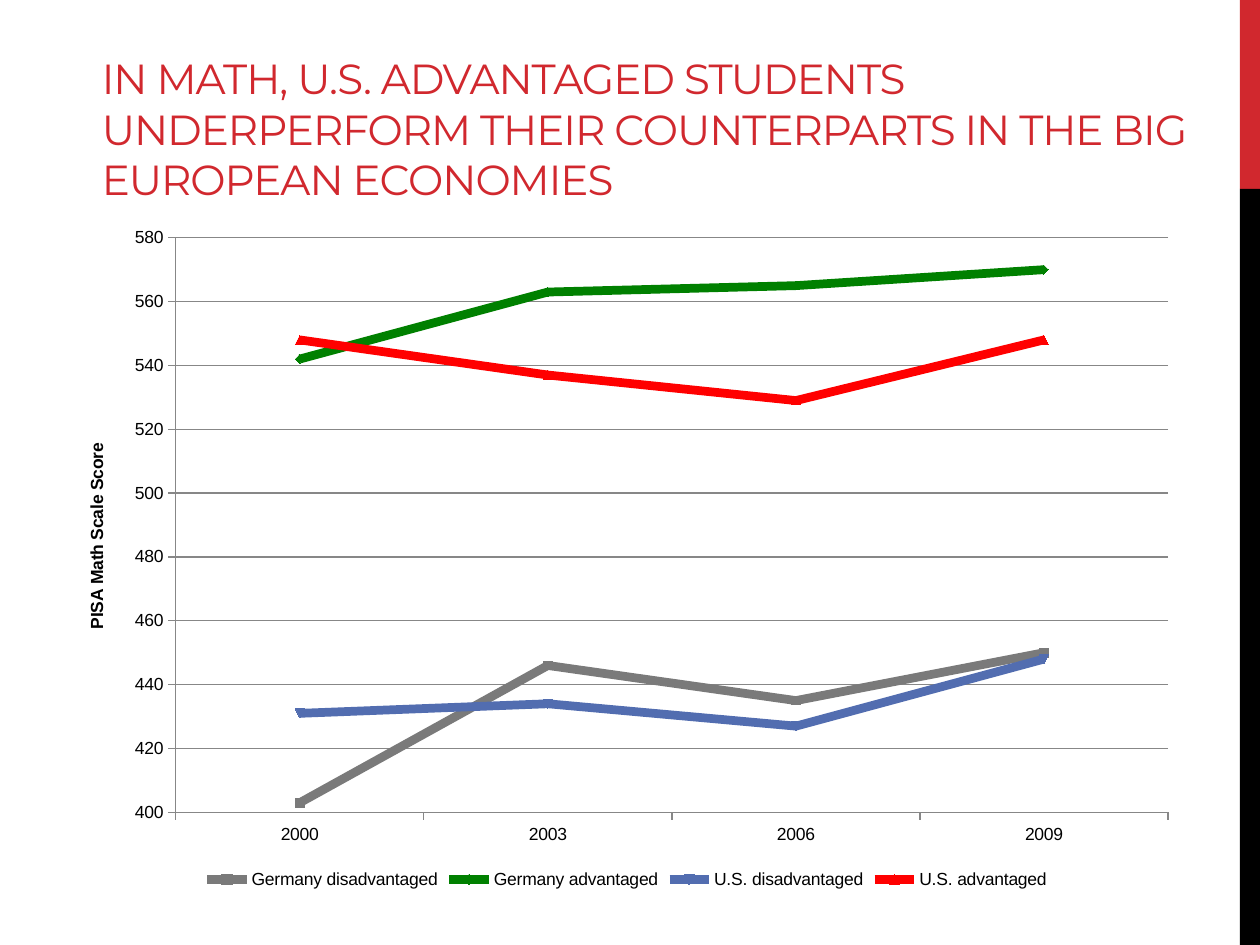
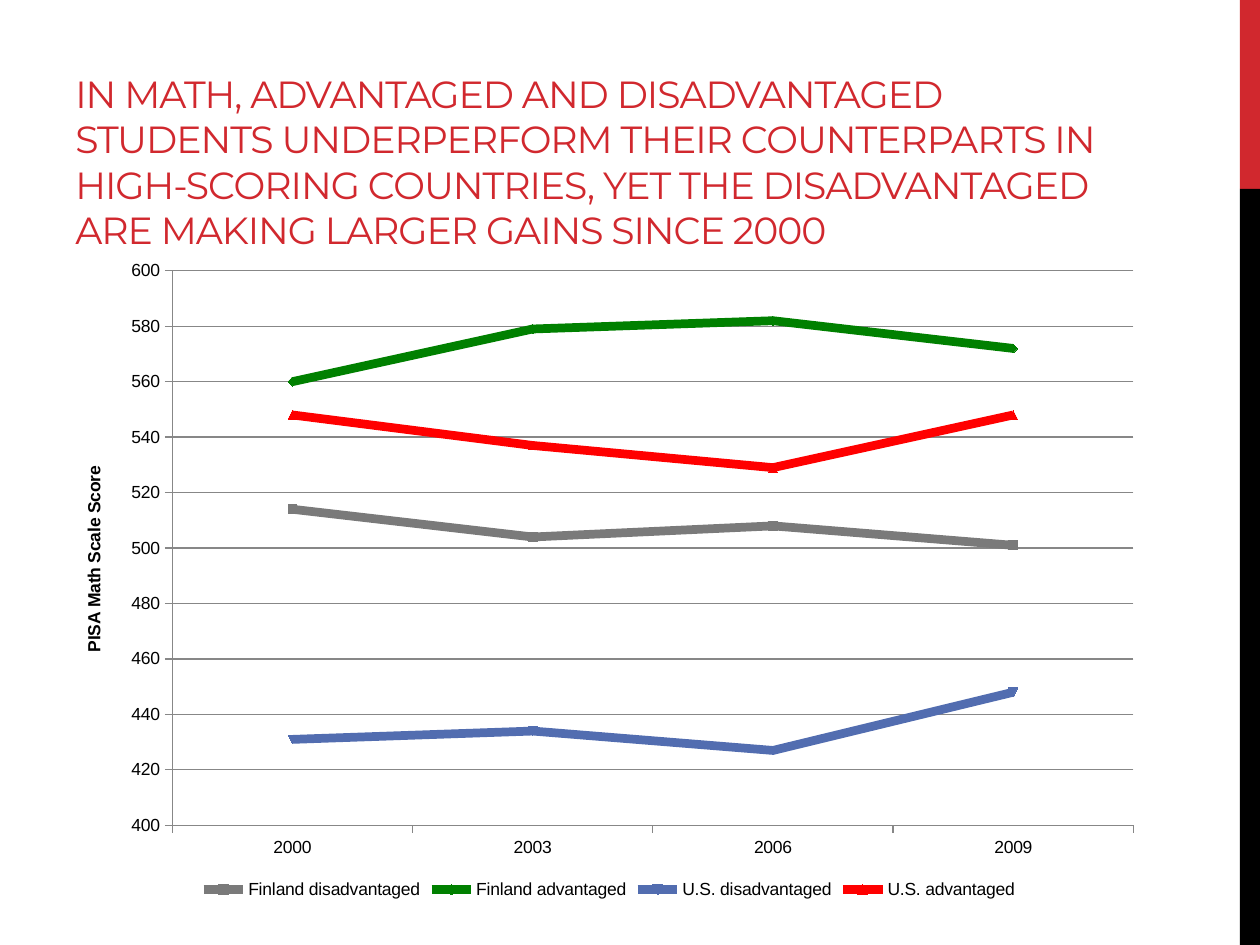
from lxml.etree import SubElement
from pptx import Presentation
from pptx.chart.data import CategoryChartData
from pptx.dml.color import RGBColor
from pptx.enum.chart import XL_CHART_TYPE, XL_LEGEND_POSITION, XL_MARKER_STYLE, XL_TICK_MARK
from pptx.enum.shapes import MSO_SHAPE
from pptx.enum.text import MSO_ANCHOR
from pptx.oxml.ns import qn
from pptx.util import Inches, Pt

RED, BLACK, AXIS_GRAY = "D1282E", "000000", "878787"
SERIES_COLORS = ["7A7A7A", "008000", "526DB0", "FF0000"]
YEARS = ["2000", "2003", "2006", "2009"]
US_SCORES = {
    "U.S. disadvantaged": [431, 434, 427, 448],
    "U.S. advantaged": [548, 537, 529, 548],
}
SIDE_BANDS = [(0, 1.5, RED), (1.5, 6, BLACK)]
PLOT_AREA = {"x": 0.1, "y": 0.04, "w": 0.88, "h": 0.84}

SLIDES = [
    {
        "title": "IN MATH, U.S. ADVANTAGED STUDENTS UNDERPERFORM THEIR "
                 "COUNTERPARTS IN THE BIG EUROPEAN ECONOMIES",
        "title_box": (0.71, 0.17, 8.91, 1.5),
        "title_size": 24,
        "chart_box": (0.5, 1.67, 8.95, 5.43),
        "top_score": 580,
        "scores": {
            "Germany disadvantaged": [403, 446, 435, 450],
            "Germany advantaged": [542, 563, 565, 570],
        },
    },
    {
        "title": "IN MATH, ADVANTAGED AND DISADVANTAGED STUDENTS UNDERPERFORM "
                 "THEIR COUNTERPARTS IN HIGH-SCORING COUNTRIES, YET THE "
                 "DISADVANTAGED ARE MAKING LARGER GAINS SINCE 2000",
        "title_box": (0.5, 0.17, 8.67, 1.88),
        "title_size": 21.6,
        "chart_box": (0.5, 1.94, 8.67, 5.24),
        "top_score": 600,
        "scores": {
            "Finland disadvantaged": [514, 504, 508, 501],
            "Finland advantaged": [560, 579, 582, 572],
        },
    },
]


def rgb(color):
    return RGBColor.from_string(color)


def set_line(line, color, width):
    line.color.rgb = rgb(color)
    line.width = Pt(width)


deck = Presentation()
deck.slide_width, deck.slide_height = Inches(10), Inches(7.5)

for content in SLIDES:
    page = deck.slides.add_slide(deck.slide_layouts[6])

    for top, height, color in SIDE_BANDS:
        band = page.shapes.add_shape(
            MSO_SHAPE.RECTANGLE, Inches(9.84), Inches(top), Inches(0.16), Inches(height))
        band.shadow.inherit = False
        band.fill.solid()
        band.fill.fore_color.rgb = rgb(color)
        band.line.fill.background()

    title = page.shapes.add_textbox(*map(Inches, content["title_box"])).text_frame
    title.word_wrap = True
    title.vertical_anchor = MSO_ANCHOR.BOTTOM
    para = title.paragraphs[0]
    span = para.add_run()
    span.text = content["title"]
    para.font.name = "Montserrat"
    para.font.size = Pt(content["title_size"])
    para.font.color.rgb = rgb(RED)
    span.font._element.set("spc", "-60")

    data = CategoryChartData(number_format="0")
    data.categories = YEARS
    for name, values in (content["scores"] | US_SCORES).items():
        data.add_series(name, values)
    chart = page.shapes.add_chart(
        XL_CHART_TYPE.LINE_MARKERS, *map(Inches, content["chart_box"]), data).chart
    chart.has_title = False
    chart.font.name = "Arial"
    chart.font.size = Pt(10)
    chart.font.color.rgb = rgb(BLACK)
    chart.has_legend = True
    chart.legend.position = XL_LEGEND_POSITION.BOTTOM
    chart.legend.include_in_layout = False

    for series, color in zip(chart.plots[0].series, SERIES_COLORS):
        series.smooth = False
        set_line(series.format.line, color, 5)
        series.marker.style = XL_MARKER_STYLE.AUTOMATIC
        series.marker.size = 5
        series.marker.format.fill.solid()
        series.marker.format.fill.fore_color.rgb = rgb(color)
        set_line(series.marker.format.line, color, 0.75)

    for axis in (chart.category_axis, chart.value_axis):
        axis.major_tick_mark = XL_TICK_MARK.OUTSIDE
        set_line(axis.format.line, AXIS_GRAY, 0.75)

    score_axis = chart.value_axis
    score_axis.minimum_scale = 400
    score_axis.maximum_scale = content["top_score"]
    score_axis.major_unit = 20
    score_axis.tick_labels.number_format = "#,##0"
    score_axis.tick_labels.number_format_is_linked = False
    set_line(score_axis.major_gridlines.format.line, AXIS_GRAY, 0.75)
    axis_title = score_axis.axis_title.text_frame
    axis_title.text = "PISA Math Scale Score"
    axis_font = axis_title.paragraphs[0].font
    axis_font.name = "Arial"
    axis_font.size = Pt(10)
    axis_font.bold = True
    axis_font.color.rgb = rgb(BLACK)

    # Fix the inner plot area as fractions of the chart.
    plot_area = chart._chartSpace.chart.plotArea
    layout = plot_area.find(qn("c:layout"))
    if layout is None:
        layout = SubElement(plot_area, qn("c:layout"))
        plot_area.insert(0, layout)
    manual = SubElement(layout, qn("c:manualLayout"))
    settings = {"layoutTarget": "inner", "xMode": "edge", "yMode": "edge"} | PLOT_AREA
    for tag, value in settings.items():
        SubElement(manual, qn(f"c:{tag}")).set("val", str(value))

deck.save("out.pptx")
